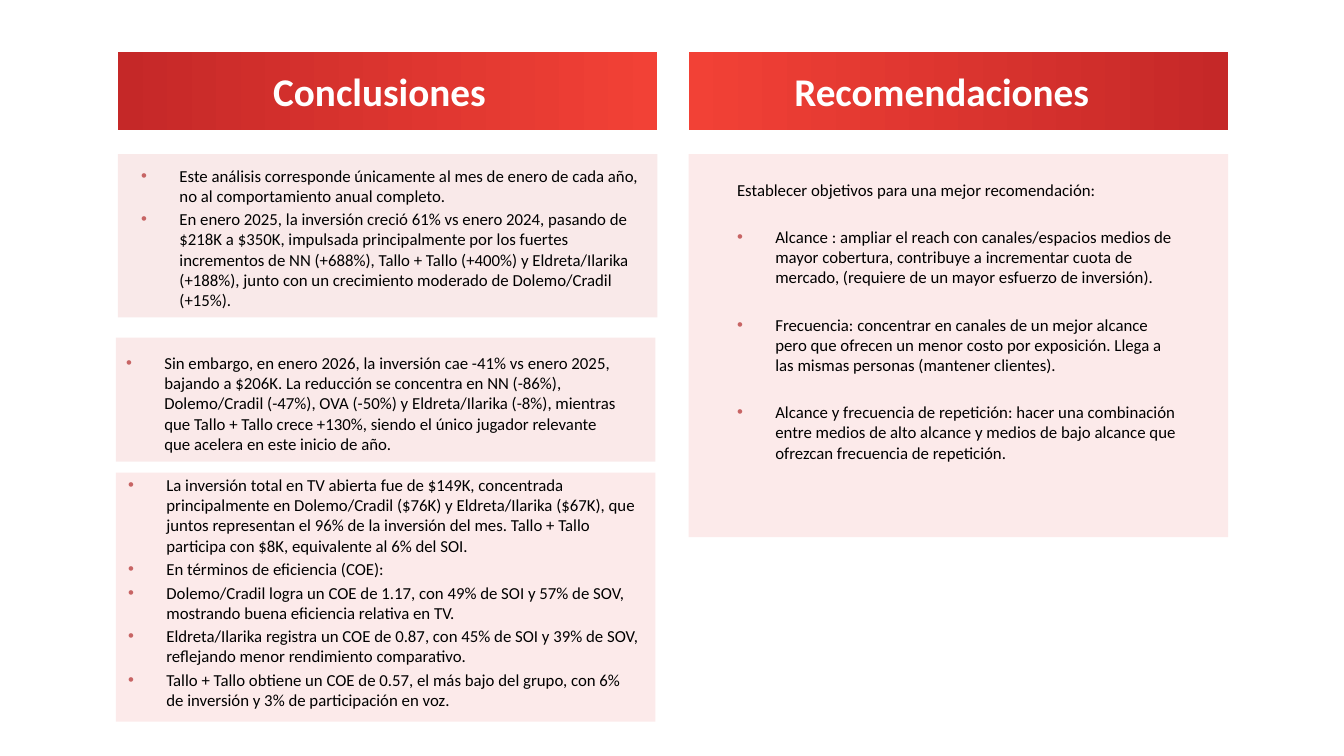
from dataclasses import dataclass

from lxml.etree import SubElement
from pptx import Presentation
from pptx.dml.color import RGBColor
from pptx.enum.shapes import MSO_SHAPE as Preset
from pptx.enum.text import MSO_ANCHOR as Anchor, MSO_AUTO_SIZE as AutoSize, PP_ALIGN as Align
from pptx.oxml.ns import qn
from pptx.util import Inches, Pt

COLORS = {
    "dark": "C52828",
    "medium": "D22F2F",
    "light": "E43834",
    "bright": "F24136",
    "bullet": "C76464",
    "text": "000000",
    "heading": "FFFFFF",
}
PANEL_WIDTH = 5.35
HEADER_TOP, HEADER_HEIGHT = 0.52, 0.77
LEFT_COLUMN, RIGHT_COLUMN = 1.17, 6.83
INDENT = Inches(0.38)
FRAME_FORMAT = {
    "auto_size": AutoSize.NONE,
    "vertical_anchor": Anchor.TOP,
    "margin_left": Inches(0.1),
    "margin_right": Inches(0.1),
    "margin_top": Inches(0.05),
    "margin_bottom": Inches(0.05),
}
HEADING_FONT = {"name": "Calibri", "size": Pt(28), "bold": True}
BODY_FONT = {"name": "Calibri", "size": Pt(12), "bold": False}


@dataclass
class Header:
    text: str
    left: float
    angle: int
    text_left: float
    text_width: float


@dataclass
class Panel:
    left: float
    top: float
    height: float
    color: str


@dataclass
class Body:
    placeholder: int
    left: float
    top: float
    width: float
    height: float
    bullets: list[str]
    intro: str = ""
    gap: float = 2.4


HEADERS = [
    Header("Conclusiones", LEFT_COLUMN, 0, 2.61, 2.45),
    Header("Recomendaciones", RIGHT_COLUMN, 180, 7.78, 3.3),
]
PANELS = [
    Panel(LEFT_COLUMN, 1.53, 1.62, "dark"),
    Panel(1.15, 3.35, 1.23, "medium"),
    Panel(1.15, 4.69, 2.47, "light"),
    Panel(RIGHT_COLUMN, 1.53, 3.8, "light"),
]
BODIES = [
    Body(1, 1.3, 1.59, 5.15, 1.56, [
        "Este análisis corresponde únicamente al mes de enero de cada año, no al "
        "comportamiento anual completo.",
        "En enero 2025, la inversión creció 61% vs enero 2024, pasando de $218K a $350K, "
        "impulsada principalmente por los fuertes incrementos de NN (+688%), Tallo + Tallo "
        "(+400%) y Eldreta/Ilarika (+188%), junto con un crecimiento moderado de "
        "Dolemo/Cradil (+15%).",
    ]),
    Body(2, 1.15, 3.45, 5.15, 1.11, [
        "Sin embargo, en enero 2026, la inversión cae -41% vs enero 2025, bajando a $206K. "
        "La reducción se concentra en NN (-86%), Dolemo/Cradil (-47%), OVA (-50%) y "
        "Eldreta/Ilarika (-8%), mientras que Tallo + Tallo crece +130%, siendo el único "
        "jugador relevante que acelera en este inicio de año.",
    ]),
    Body(3, 1.17, 4.66, 5.28, 2.48, [
        "La inversión total en TV abierta fue de $149K, concentrada principalmente en "
        "Dolemo/Cradil ($76K) y Eldreta/Ilarika ($67K), que juntos representan el 96% de la "
        "inversión del mes. Tallo + Tallo participa con $8K, equivalente al 6% del SOI.",
        "En términos de eficiencia (COE):",
        "Dolemo/Cradil logra un COE de 1.17, con 49% de SOI y 57% de SOV, mostrando buena "
        "eficiencia relativa en TV.",
        "Eldreta/Ilarika registra un COE de 0.87, con 45% de SOI y 39% de SOV, reflejando "
        "menor rendimiento comparativo.",
        "Tallo + Tallo obtiene un COE de 0.57, el más bajo del grupo, con 6% de inversión y "
        "3% de participación en voz.",
    ]),
    Body(4, 7.21, 1.73, 4.59, 3.32, [
        "Alcance : ampliar el reach con canales/espacios medios de mayor cobertura, "
        "contribuye a incrementar cuota de mercado, (requiere de un mayor esfuerzo de "
        "inversión).",
        "Frecuencia: concentrar en canales de un mejor alcance pero que ofrecen un menor "
        "costo por exposición. Llega a las mismas personas (mantener clientes).",
        "Alcance y frecuencia de repetición: hacer una combinación entre medios de alto "
        "alcance y medios de bajo alcance que ofrezcan frecuencia de repetición.",
    ], "Establecer objetivos para una mejor recomendación:", 19.4),
]


def rgb(name: str) -> RGBColor:
    return RGBColor.from_string(COLORS[name])


def apply_format(target, values: dict) -> None:
    for name, value in values.items():
        setattr(target, name, value)


def place(shape, left: float, top: float, width: float, height: float) -> None:
    apply_format(shape, {
        "left": Inches(left), "top": Inches(top),
        "width": Inches(width), "height": Inches(height),
    })


def add_rectangle(slide, left: float, top: float, height: float):
    shape = slide.shapes.add_shape(
        Preset.RECTANGLE, Inches(left), Inches(top), Inches(PANEL_WIDTH), Inches(height))
    shape.shadow.inherit = False
    shape.line.fill.background()
    return shape


def draw_panel(slide, panel: Panel) -> None:
    fill = add_rectangle(slide, panel.left, panel.top, panel.height).fill
    fill.solid()
    fill.fore_color.rgb = rgb(panel.color)
    color = fill._xPr.find(qn("a:solidFill"))[0]
    SubElement(color, qn("a:alpha"), val="10000")


def draw_header(slide, header: Header, shape) -> None:
    fill = add_rectangle(slide, header.left, HEADER_TOP, HEADER_HEIGHT).fill
    fill.gradient()
    fill.gradient_angle = header.angle
    for stop, color in zip(fill.gradient_stops, ("dark", "bright")):
        stop.color.rgb = rgb(color)
    slide.shapes.element.append(shape.element)
    place(shape, header.text_left, 0.62, header.text_width, 0.57)
    frame = shape.text_frame
    frame.text = header.text
    apply_format(frame, FRAME_FORMAT | {"word_wrap": False})
    paragraph = frame.paragraphs[0]
    paragraph.alignment = Align.LEFT
    apply_format(paragraph.font, HEADING_FONT)
    paragraph.font.color.rgb = rgb("heading")


def set_bullet(paragraph, bulleted: bool) -> None:
    properties = paragraph._p.get_or_add_pPr()
    properties.set("marL", str(INDENT if bulleted else 0))
    properties.set("indent", str(-INDENT if bulleted else 0))
    if bulleted:
        color = SubElement(properties, qn("a:buClr"))
        SubElement(color, qn("a:srgbClr"), val=COLORS["bullet"])
        SubElement(properties, qn("a:buFont"), typeface="Arial")
        SubElement(properties, qn("a:buChar"), char="•")
    else:
        SubElement(properties, qn("a:buNone"))


def fill_body(slide, body: Body) -> None:
    shape = slide.placeholders[body.placeholder]
    slide.shapes.element.append(shape.element)
    place(shape, body.left, body.top, body.width, body.height)
    frame = shape.text_frame
    texts = [body.intro] * bool(body.intro) + body.bullets
    frame.text = "\n".join(texts)
    apply_format(frame, FRAME_FORMAT | {"word_wrap": True})
    for index, paragraph in enumerate(frame.paragraphs):
        set_bullet(paragraph, paragraph.text != body.intro)
        paragraph.alignment = Align.LEFT
        paragraph.space_before = Pt(body.gap if index else 0)
        apply_format(paragraph.font, BODY_FONT)
        paragraph.font.color.rgb = rgb("text")


def main() -> None:
    presentation = Presentation()
    presentation.slide_width = Inches(13.33)
    presentation.slide_height = Inches(7.5)
    slide = presentation.slides.add_slide(presentation.slide_layouts.get_by_name("Comparison"))
    for panel in PANELS:
        draw_panel(slide, panel)
    second_heading = slide.shapes.add_textbox(0, 0, 0, 0)
    for header, shape in zip(HEADERS, (slide.shapes.title, second_heading)):
        draw_header(slide, header, shape)
    for body in BODIES:
        fill_body(slide, body)
    presentation.save("out.pptx")


if __name__ == "__main__":
    main()
